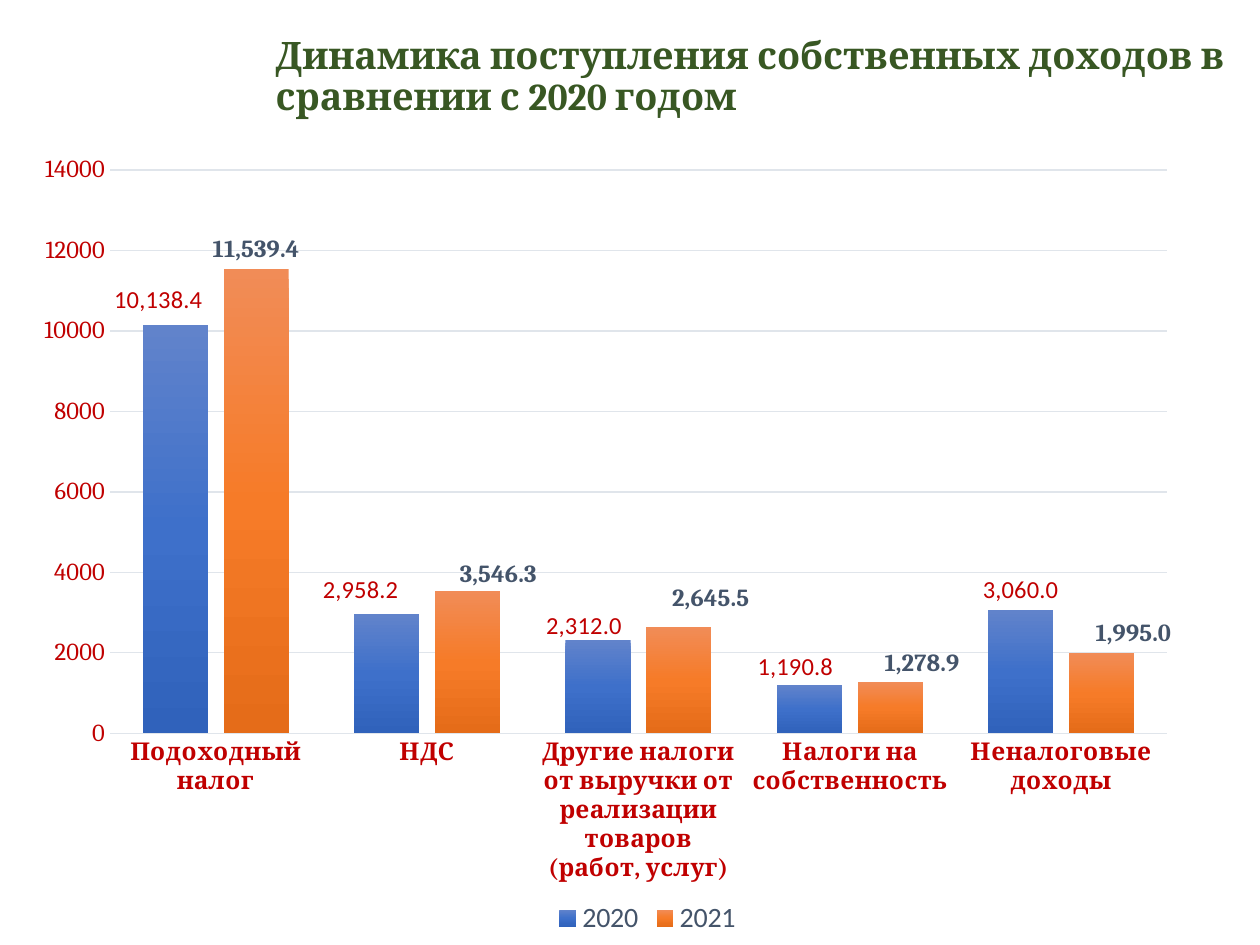
from copy import deepcopy

from pptx import Presentation
from pptx.chart.data import CategoryChartData
from pptx.dml.color import RGBColor
from pptx.enum.chart import XL_CHART_TYPE, XL_LABEL_POSITION, XL_LEGEND_POSITION, XL_TICK_MARK
from pptx.enum.text import MSO_ANCHOR, MSO_AUTO_SIZE, PP_ALIGN
from pptx.oxml import parse_xml
from pptx.oxml.ns import nsdecls, qn
from pptx.util import Emu, Pt

COLUMNS = XL_CHART_TYPE.COLUMN_CLUSTERED
OUTSIDE = XL_LABEL_POSITION.OUTSIDE_END
BOTTOM_LEGEND = XL_LEGEND_POSITION.BOTTOM
NO_TICK = XL_TICK_MARK.NONE
BOTTOM = MSO_ANCHOR.BOTTOM
NO_FIT = MSO_AUTO_SIZE.NONE
LEFT = PP_ALIGN.LEFT

PX_PER_INCH = 126
CHART_BOX = (0, 152, 1295, 789)
COLORS = {"title": "385723", "red": "C00000", "slate": "44546A", "grid": "E0E5EB"}

CATEGORIES = [
    "Подоходный налог",
    "НДС",
    "Другие налоги от выручки от реализации товаров (работ, услуг)",
    "Налоги на собственность",
    "Неналоговые доходы",
]
# Label shifts are px away from the usual place above the column
SERIES = [
    {
        "name": "2020",
        "values": [10138.4, 2958.2, 2312, 1190.8, 3060],
        "gradient": ["6183CB", "3E70CA", "3062BB"],
        "label": ("Calibri", 14, "red", False),
        "shifts": {0: (-17, -5), 1: (-26, -4), 2: (-14, 6), 3: (-14, 2)},
    },
    {
        "name": "2021",
        "values": [11539.4, 3546.3, 2645.5, 1278.9, 1995],
        "gradient": ["F18C57", "F67B28", "E56C19"],
        "label": ("Cambria", 14, "slate", True),
        "shifts": {1: (31, 3), 2: (32, -9), 3: (32, 1), 4: (32, 0)},
    },
]


def px(length):
    return Emu(round(length * 914400 / PX_PER_INCH))


def style_font(font, name, size, color, bold=False):
    font.name, font.size, font.bold = name, Pt(size), bold
    font.color.rgb = RGBColor.from_string(COLORS[color])


def style_line(line):
    line.width = Pt(0.75)
    line.color.rgb = RGBColor.from_string(COLORS["grid"])


def manual_layout(x, y, size=None):
    """Layout in shares of the chart; with a size it places the inner plot area."""
    parts = [("x", x), ("y", y)]
    if size:
        parts = [("layoutTarget", "inner"), ("xMode", "edge"), ("yMode", "edge"),
                 *parts, ("w", size[0]), ("h", size[1])]
    inner = "".join(f'<c:{tag} val="{value}"/>' for tag, value in parts)
    return parse_xml(f'<c:layout {nsdecls("c")}><c:manualLayout>{inner}'
                     "</c:manualLayout></c:layout>")


def add_title(page):
    title = page.shapes.title
    title.left, title.top, title.width, title.height = map(px, (263, 42, 983, 83))
    frame = title.text_frame
    frame.word_wrap, frame.auto_size, frame.vertical_anchor = True, NO_FIT, BOTTOM
    para = frame.paragraphs[0]
    para.alignment, para.line_spacing = LEFT, 0.9
    span = para.add_run()
    span.text = "Динамика поступления собственных доходов в сравнении с 2020 годом"
    style_font(span.font, "Cambria", 21.6, "title", True)


def fill_gradient(series, colors):
    stops = "".join(
        f'<a:gs pos="{place * 50000}"><a:srgbClr val="{color}"/></a:gs>'
        for place, color in enumerate(colors))
    series._element.get_or_add_spPr().insert(0, parse_xml(
        f'<a:gradFill {nsdecls("a")} rotWithShape="1"><a:gsLst>{stops}</a:gsLst>'
        '<a:lin ang="5400000" scaled="0"/></a:gradFill>'))


def add_labels(series, font, shifts):
    labels = series.data_labels
    labels.show_value = True
    labels.number_format, labels.number_format_is_linked = "#,##0.0", False
    labels.position = OUTSIDE
    style_font(labels.font, *font)

    # Shifted labels share the settings of the whole series
    group = labels._element
    shared = [part for part in group if part.tag != qn("c:showLeaderLines")]
    for place, (index, (dx, dy)) in enumerate(shifts.items()):
        label = parse_xml(f'<c:dLbl {nsdecls("c")}><c:idx val="{index}"/></c:dLbl>')
        label.append(manual_layout(round(dx / CHART_BOX[2], 4), round(dy / CHART_BOX[3], 4)))
        for part in shared:
            label.append(deepcopy(part))
        group.insert(place, label)


def style_axes(chart):
    for axis, bold in ((chart.category_axis, True), (chart.value_axis, False)):
        axis.major_tick_mark = axis.minor_tick_mark = NO_TICK
        style_font(axis.tick_labels.font, "Cambria", 14, "red", bold)
    style_line(chart.category_axis.format.line)
    chart.value_axis.format.line.fill.background()
    chart.value_axis.has_major_gridlines = True
    style_line(chart.value_axis.major_gridlines.format.line)


def add_income_chart(page):
    data = CategoryChartData()
    data.categories = CATEGORIES
    for entry in SERIES:
        data.add_series(entry["name"], entry["values"])
    chart = page.shapes.add_chart(COLUMNS, *map(px, CHART_BOX), data).chart
    chart.has_title = False
    chart.font.name, chart.font.size = "Calibri", Pt(10)

    # Plot area and columns
    area = chart._chartSpace.chart.plotArea
    for old in area.findall(qn("c:layout")):
        area.remove(old)
    area.insert(0, manual_layout(0.085, 0.023, (0.816, 0.714)))
    plot = chart.plots[0]
    plot.gap_width, plot.overlap, plot.vary_by_categories = 100, -24, False
    for series, entry in zip(plot.series, SERIES):
        fill_gradient(series, entry["gradient"])
        add_labels(series, entry["label"], entry["shifts"])

    style_axes(chart)

    # Legend
    chart.has_legend = True
    chart.legend.position, chart.legend.include_in_layout = BOTTOM_LEGEND, False
    style_font(chart.legend.font, "Calibri", 16, "slate")


def main():
    deck = Presentation()
    deck.slide_width, deck.slide_height = px(1260), px(945)
    page = deck.slides.add_slide(deck.slide_layouts[5])
    add_title(page)
    add_income_chart(page)
    deck.save("out.pptx")


if __name__ == "__main__":
    main()
